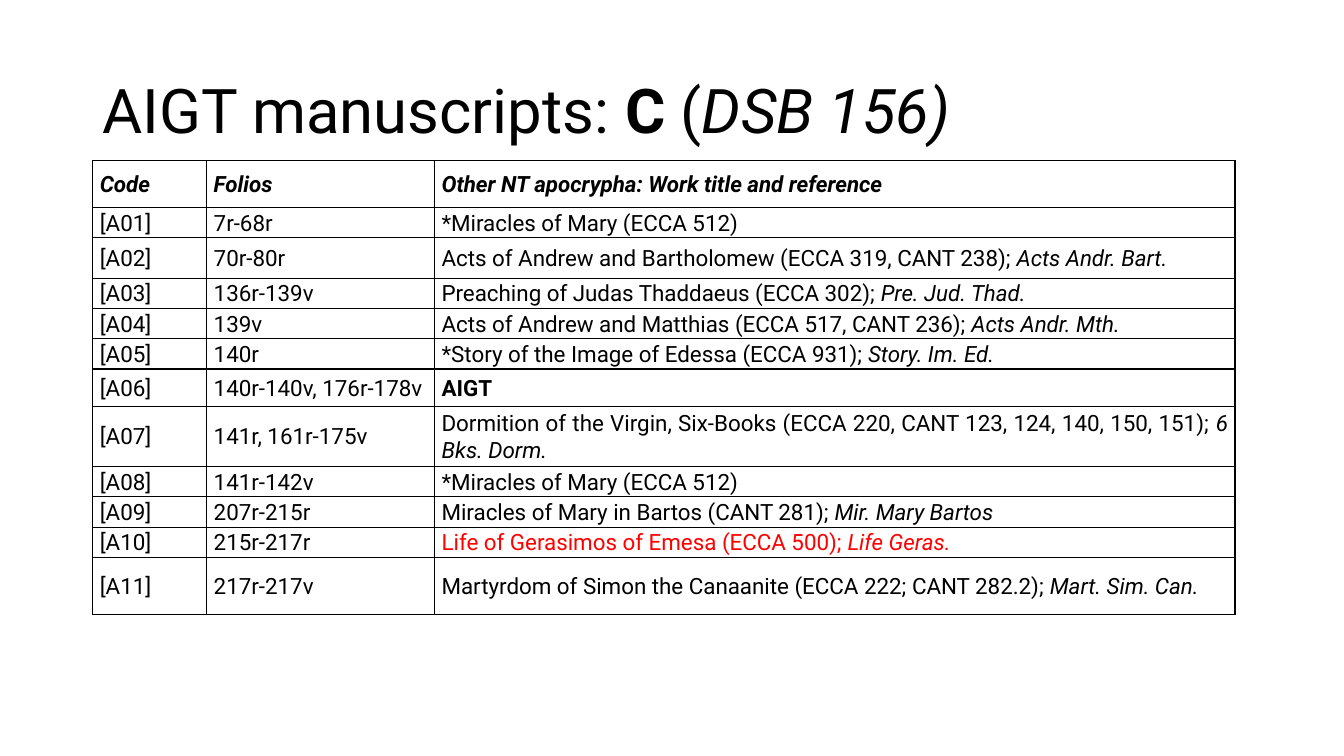
from lxml.etree import SubElement
from pptx import Presentation
from pptx.dml.color import RGBColor
from pptx.enum.text import MSO_ANCHOR as Anchor, PP_ALIGN as Align
from pptx.oxml.ns import qn
from pptx.util import Inches, Pt

BLACK = RGBColor(0, 0, 0)
RED = RGBColor(255, 0, 0)

COLUMN_WIDTHS = [1.13, 2.26, 7.94]
ROW_HEIGHTS = [0.47, 0.3, 0.4, 0.3, 0.3, 0.3, 0.37, 0.6, 0.3, 0.3, 0.3, 0.57]
HEADINGS = ["Code", "Folios", "Other NT apocrypha: Work title and reference"]
# Folios, work title and reference, abbreviated title
WORKS = [
    ("7r-68r", "*Miracles of Mary (ECCA 512)", ""),
    ("70r-80r", "Acts of Andrew and Bartholomew (ECCA 319, CANT 238); ", "Acts Andr. Bart."),
    ("136r-139v", "Preaching of Judas Thaddaeus (ECCA 302); ", "Pre. Jud. Thad."),
    ("139v", "Acts of Andrew and Matthias (ECCA 517, CANT 236); ", "Acts Andr. Mth."),
    ("140r", "*Story of the Image of Edessa (ECCA 931); ", "Story. Im. Ed."),
    ("140r-140v, 176r-178v", "AIGT", ""),
    ("141r, 161r-175v",
     "Dormition of the Virgin, Six-Books (ECCA 220, CANT 123, 124, 140, 150, 151); ",
     "6 Bks. Dorm."),
    ("141r-142v", "*Miracles of Mary (ECCA 512)", ""),
    ("207r-215r", "Miracles of Mary in Bartos (CANT 281); ", "Mir. Mary Bartos"),
    ("215r-217r", "Life of Gerasimos of Emesa (ECCA 500); ", "Life Geras."),
    ("217r-217v", "Martyrdom of Simon the Canaanite (ECCA 222; CANT 282.2); ",
     "Mart. Sim. Can."),
]


class ManuscriptSlide:
    font = "Roboto"
    title_size = Pt(44)
    table_size = Pt(16)

    def __init__(self, prs):
        self.slide = prs.slides.add_slide(prs.slide_layouts[6])

    def add_runs(self, p, runs, size, color=BLACK):
        """Fill a paragraph with (text, bold, italic) runs."""
        for text, bold, italic in runs:
            r = p.add_run()
            r.text = text
            r.font.name = self.font
            r.font.size = size
            r.font.bold = bold
            r.font.italic = italic
            r.font.color.rgb = color

    def title(self, runs, left, top, width, height):
        box = self.slide.shapes.add_textbox(
            Inches(left), Inches(top), Inches(width), Inches(height))
        tf = box.text_frame
        tf.word_wrap = True
        tf.vertical_anchor = Anchor.MIDDLE
        p = tf.paragraphs[0]
        p.line_spacing = 0.9
        self.add_runs(p, runs, self.title_size)

    def table(self, left, top, widths, heights):
        frame = self.slide.shapes.add_table(
            len(heights), len(widths), Inches(left), Inches(top),
            Inches(sum(widths)), Inches(sum(heights)))
        table = frame.table
        table.first_row = table.horz_banding = False
        for column, width in zip(table.columns, widths):
            column.width = Inches(width)
        for row, height in zip(table.rows, heights):
            row.height = Inches(height)
        return table

    def cell(self, cell, runs, color=BLACK):
        cell.margin_left = cell.margin_right = Inches(0.07)
        cell.margin_top = cell.margin_bottom = 0
        cell.vertical_anchor = Anchor.MIDDLE
        self.borders(cell)
        cell.fill.background()
        p = cell.text_frame.paragraphs[0]
        p.alignment = Align.JUSTIFY
        p.line_spacing = 1.07
        self.add_runs(p, runs, self.table_size, color)

    def borders(self, cell):
        """Draw thin black lines on all four sides; call before setting the fill."""
        tc_pr = cell._tc.get_or_add_tcPr()
        for side in ("a:lnL", "a:lnR", "a:lnT", "a:lnB"):
            line = SubElement(tc_pr, qn(side), w=str(Pt(1)))
            fill = SubElement(line, qn("a:solidFill"))
            SubElement(fill, qn("a:srgbClr"), val=str(BLACK))


def main():
    prs = Presentation()
    prs.slide_width = Inches(13.33)
    prs.slide_height = Inches(7.5)
    s = ManuscriptSlide(prs)

    s.title([("AIGT manuscripts: ", False, False), ("C", True, False),
             (" (", False, False), ("DSB 156)", False, True)],
            0.92, 0.4, 11.5, 1.45)

    table = s.table(0.92, 1.59, COLUMN_WIDTHS, ROW_HEIGHTS)
    for column, heading in enumerate(HEADINGS):
        s.cell(table.cell(0, column), [(heading, True, True)])
    for row, (folios, work, abbreviation) in enumerate(WORKS, start=1):
        s.cell(table.cell(row, 0), [(f"[A{row:02}]", False, False)])
        s.cell(table.cell(row, 1), [(folios, False, False)])
        runs = [(work, work == "AIGT", False)]
        if abbreviation:
            runs.append((abbreviation, False, True))
        color = RED if abbreviation == "Life Geras." else BLACK
        s.cell(table.cell(row, 2), runs, color)

    prs.save("out.pptx")


if __name__ == "__main__":
    main()
